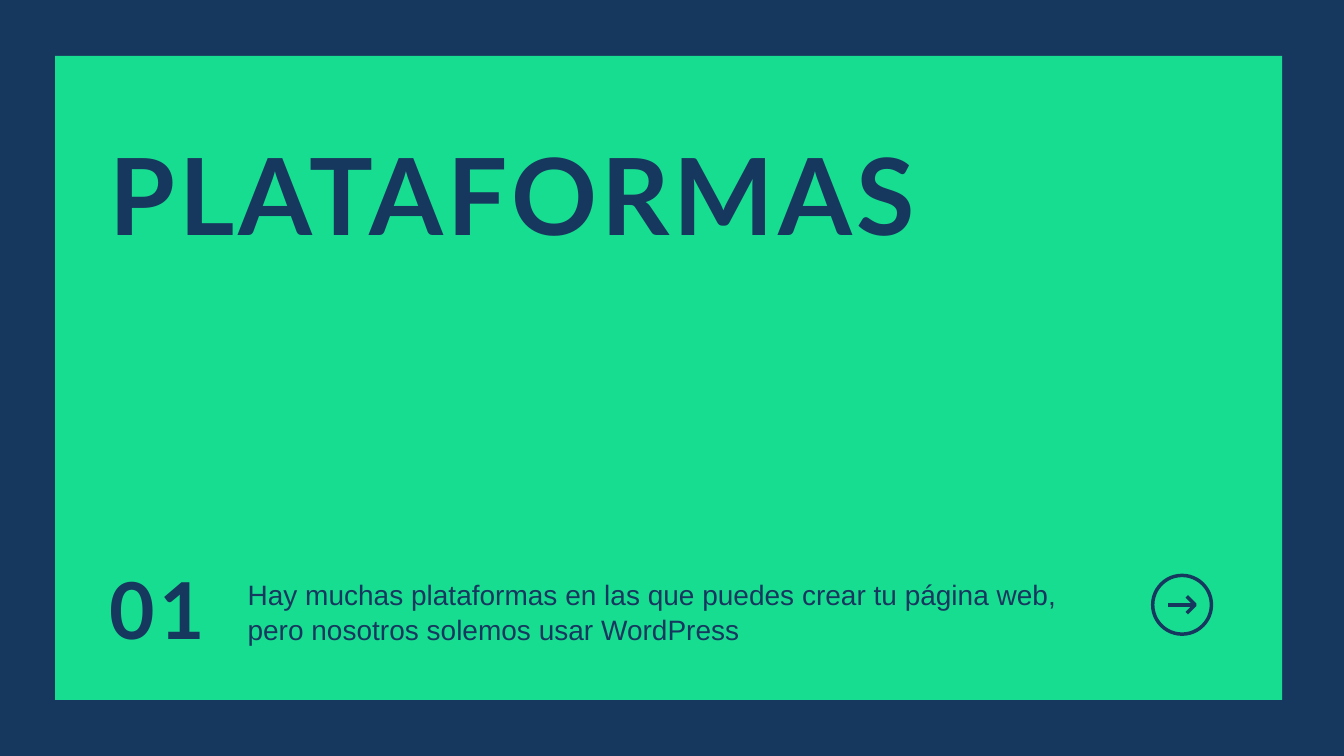
from dataclasses import dataclass

from lxml import etree
from pptx import Presentation
from pptx.dml.color import RGBColor
from pptx.enum.shapes import MSO_CONNECTOR, MSO_SHAPE
from pptx.enum.text import MSO_ANCHOR
from pptx.oxml.ns import qn
from pptx.util import Cm, Pt

RECTANGLE = MSO_SHAPE.RECTANGLE
OVAL = MSO_SHAPE.OVAL
STRAIGHT = MSO_CONNECTOR.STRAIGHT
TOP = MSO_ANCHOR.TOP
MIDDLE = MSO_ANCHOR.MIDDLE


@dataclass(frozen=True)
class Theme:
    navy: RGBColor = RGBColor(0x17, 0x38, 0x5E)
    green: RGBColor = RGBColor(0x17, 0xDD, 0x91)
    heading_font: str = "Lato"
    body_font: str = "Arial"
    title_size: int = 76
    number_size: int = 56
    body_size: int = 20
    letter_spacing: int = 3
    body_line_spacing: float = 1.05
    icon_line: float = 2.5


THEME = Theme()


def add_panel(slide, left, top, width, height):
    panel = slide.shapes.add_shape(RECTANGLE, Cm(left), Cm(top), Cm(width), Cm(height))
    panel.shadow.inherit = False
    panel.fill.solid()
    panel.fill.fore_color.rgb = THEME.green
    panel.line.fill.background()


def add_text(slide, text, box, font_name, size, anchor=TOP):
    text_box = slide.shapes.add_textbox(*(Cm(length) for length in box))
    frame = text_box.text_frame
    frame.word_wrap = True
    frame.vertical_anchor = anchor
    paragraph = frame.paragraphs[0]
    run = paragraph.add_run()
    run.text = text
    run.font.name = font_name
    run.font.size = Pt(size)
    run.font.color.rgb = THEME.navy
    return paragraph


def add_heading(slide, text, box, size, anchor=TOP):
    paragraph = add_text(slide, text, box, THEME.heading_font, size, anchor)
    font = paragraph.runs[0].font
    font.bold = True
    font._element.set("spc", str(THEME.letter_spacing * 100))


def add_body(slide, text, box):
    paragraph = add_text(slide, text, box, THEME.body_font, THEME.body_size)
    paragraph.line_spacing = THEME.body_line_spacing


def style_outline(shape):
    shape.line.color.rgb = THEME.navy
    shape.line.width = Pt(THEME.icon_line)


def add_arrow_icon(slide, center_x, center_y, radius):
    shapes = slide.shapes
    tip_x = center_x + 0.33
    tail_x = center_x - 0.36
    head = 0.21

    builder = shapes.build_freeform(Cm(tip_x - head), Cm(center_y - head))
    builder.add_line_segments(
        [(Cm(tip_x), Cm(center_y)), (Cm(tip_x - head), Cm(center_y + head))],
        close=False,
    )
    chevron = builder.convert_to_shape()

    shaft = shapes.add_connector(
        STRAIGHT, Cm(tip_x), Cm(center_y), Cm(tail_x), Cm(center_y)
    )
    style_outline(shaft)
    etree.SubElement(shaft._element.spPr, qn("a:effectLst"))

    ring = shapes.add_shape(
        OVAL, Cm(center_x - radius), Cm(center_y - radius), Cm(2 * radius), Cm(2 * radius)
    )
    for outline in (chevron, ring):
        outline.shadow.inherit = False
        outline.fill.background()
        style_outline(outline)


def main():
    presentation = Presentation()
    presentation.slide_width = Cm(33.87)
    presentation.slide_height = Cm(19.05)
    slide = presentation.slides.add_slide(presentation.slide_layouts[6])
    slide.background.fill.solid()
    slide.background.fill.fore_color.rgb = THEME.navy

    add_panel(slide, 1.39, 1.41, 30.92, 16.23)
    add_heading(slide, "PLATAFORMAS", (2.51, 3.12, 22.96, 5.51), THEME.title_size)
    add_arrow_icon(slide, 29.79, 15.24, 0.74)
    add_heading(slide, "01", (2.51, 14.68, 22.96, 1.27), THEME.number_size, MIDDLE)
    add_body(
        slide,
        "Hay muchas plataformas en las que puedes crear tu página web, "
        "pero nosotros solemos usar WordPress",
        (5.99, 14.38, 21.69, 1.96),
    )
    presentation.save("out.pptx")


if __name__ == "__main__":
    main()
